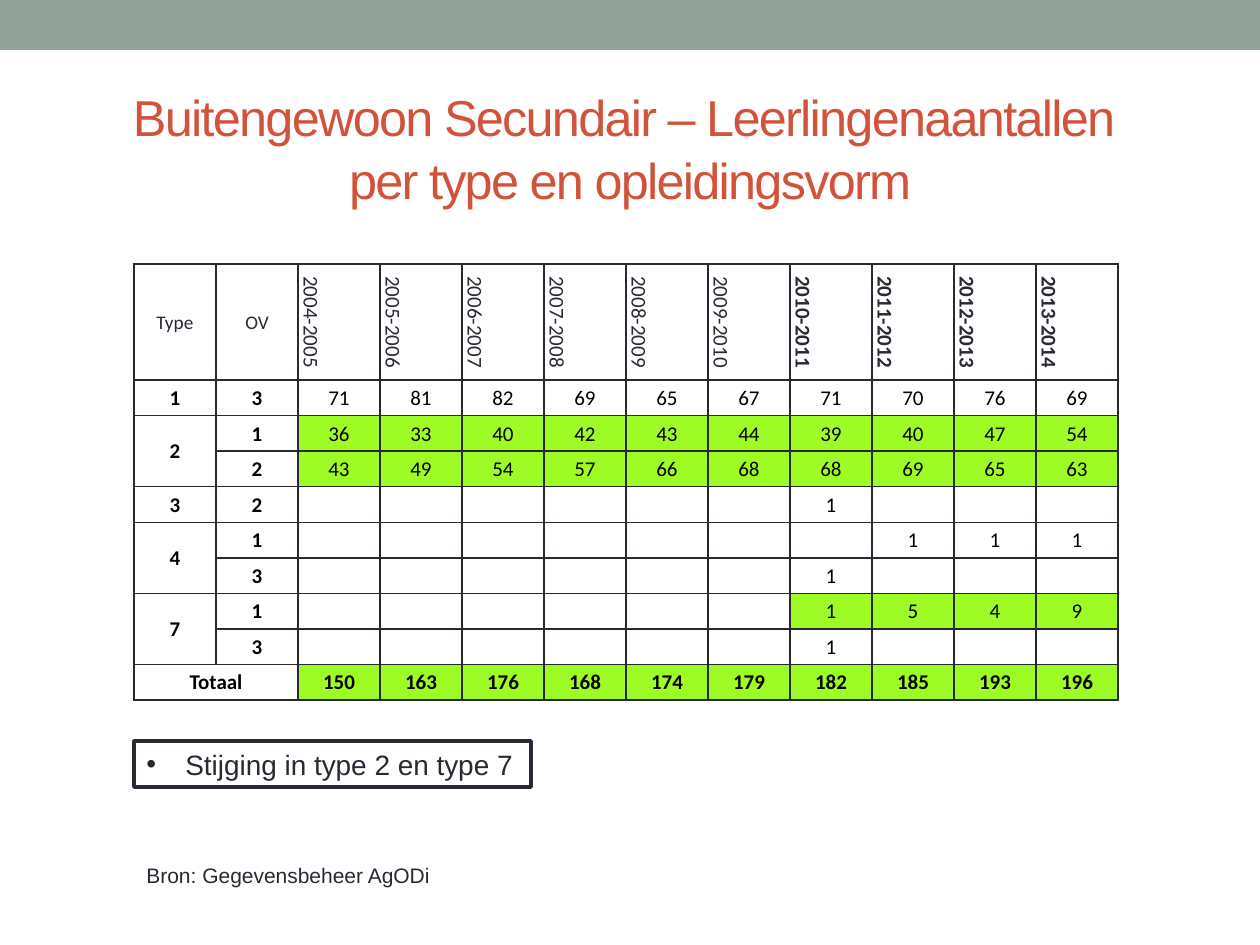
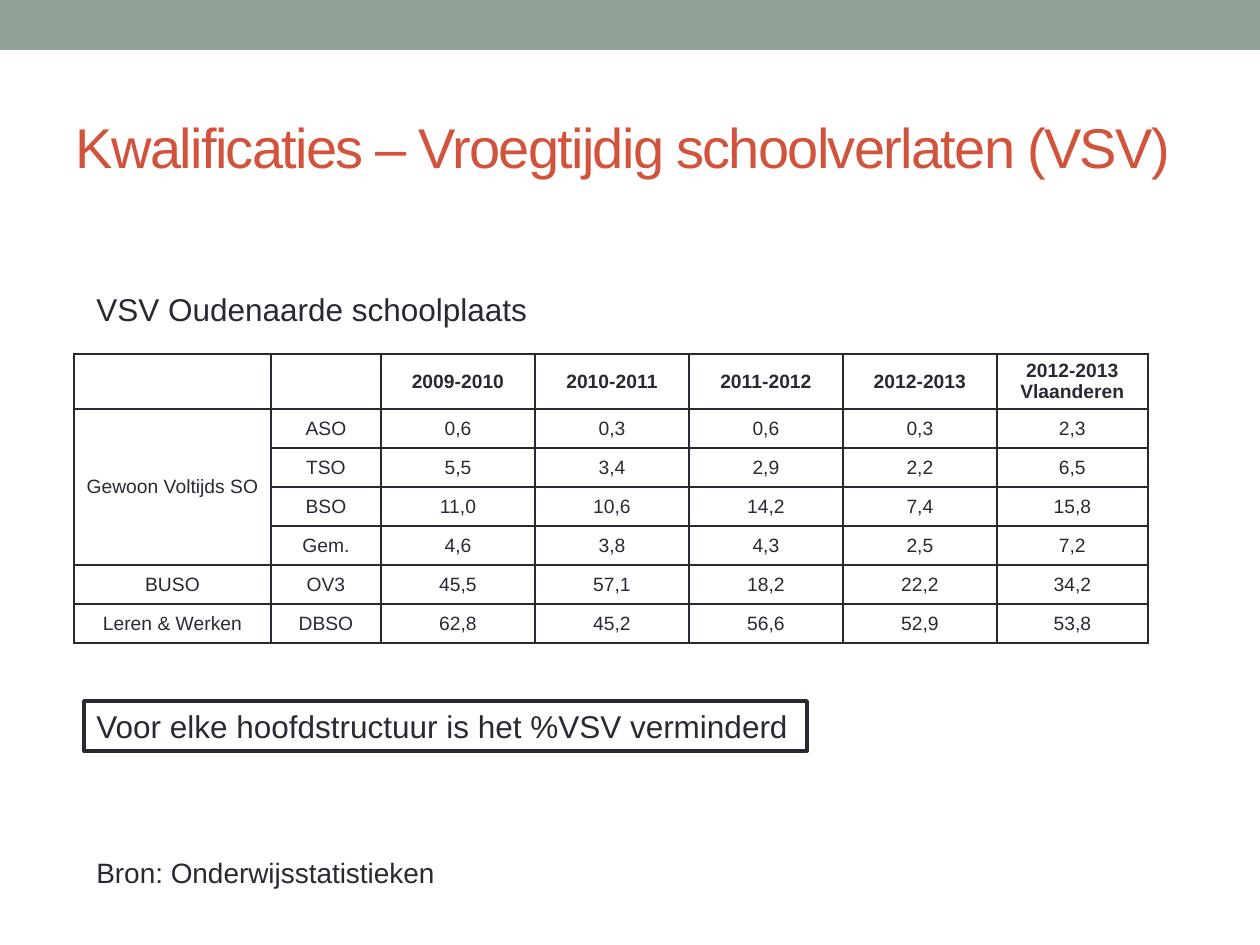
from dataclasses import dataclass

from lxml.etree import SubElement
from pptx import Presentation
from pptx.dml.color import RGBColor
from pptx.enum.shapes import MSO_SHAPE
from pptx.enum.text import MSO_ANCHOR, MSO_AUTO_SIZE, PP_ALIGN
from pptx.oxml import parse_xml
from pptx.oxml.ns import nsdecls, qn
from pptx.util import Emu, Pt

PX_PER_INCH = 126
TITLE_ONLY = 5


@dataclass(frozen=True)
class Theme:
    band: str = "93A299"
    accent: str = "D2533C"
    ink: str = "292934"
    black: str = "000000"
    paper: str = "FFFFFF"
    highlight: str = "9FFB25"
    font: str = "Arial"
    table_font: str = "Calibri"
    title: float = 32
    long_title: float = 28.8
    heading: float = 18
    body: float = 16
    small: float = 12
    cell: float = 11
    frame_width: float = 2.08
    border_width: float = 1


THEME = Theme()

# Pupil numbers by type and training form
PUPIL_YEARS = [f"{year}-{year + 1}" for year in range(2004, 2014)]
PUPIL_ROWS = [
    ["Type", "OV", *PUPIL_YEARS],
    ["1", "3", 71, 81, 82, 69, 65, 67, 71, 70, 76, 69],
    ["2", "1", 36, 33, 40, 42, 43, 44, 39, 40, 47, 54],
    ["", "2", 43, 49, 54, 57, 66, 68, 68, 69, 65, 63],
    ["3", "2", *[""] * 6, 1, "", "", ""],
    ["4", "1", *[""] * 7, 1, 1, 1],
    ["", "3", *[""] * 6, 1, "", "", ""],
    ["7", "1", *[""] * 6, 1, 5, 4, 9],
    ["", "3", *[""] * 6, 1, "", "", ""],
    ["Totaal", "", 150, 163, 176, 168, 174, 179, 182, 185, 193, 196],
]
PUPIL_MERGES = [(2, 0, 3, 0), (5, 0, 6, 0), (7, 0, 8, 0), (9, 0, 9, 1)]
FIRST_RECENT_COLUMN = 8

# Early school leaving, in percent
LEAVER_ROWS = [
    ["", "", "2009-2010", "2010-2011", "2011-2012", "2012-2013", "2012-2013\nVlaanderen"],
    ["Gewoon Voltijds SO", "ASO", "0,6", "0,3", "0,6", "0,3", "2,3"],
    ["", "TSO", "5,5", "3,4", "2,9", "2,2", "6,5"],
    ["", "BSO", "11,0", "10,6", "14,2", "7,4", "15,8"],
    ["", "Gem.", "4,6", "3,8", "4,3", "2,5", "7,2"],
    ["BUSO", "OV3", "45,5", "57,1", "18,2", "22,2", "34,2"],
    ["Leren & Werken", "DBSO", "62,8", "45,2", "56,6", "52,9", "53,8"],
]
LEAVER_MERGES = [(1, 0, 4, 0)]


def px(length):
    return Emu(round(length * 914400 / PX_PER_INCH))


def paint(fill, color):
    fill.solid()
    fill.fore_color.rgb = RGBColor.from_string(color)


def set_margins(target, left, top, right, bottom):
    target.margin_left, target.margin_top = px(left), px(top)
    target.margin_right, target.margin_bottom = px(right), px(bottom)


def write(frame, text, size=THEME.body, color=THEME.ink, font=THEME.font, bold=False,
          align=PP_ALIGN.LEFT, tracking=0, line_spacing=None, bullet_indent=0):
    """Fill a text frame; a newline starts a paragraph, a vertical tab breaks a line."""
    for index, line in enumerate(text.split("\n")):
        para = frame.add_paragraph() if index else frame.paragraphs[0]
        para.text = line
        para.alignment = align
        if line_spacing:
            para.line_spacing = line_spacing
        for span in para.runs:
            span.font.size = Pt(size)
            span.font.name = font
            span.font.bold = bold
            span.font.color.rgb = RGBColor.from_string(color)
            if tracking:
                span.font._element.set("spc", str(tracking * 100))
        if not line:
            # Keeps an empty row from growing to the default type size
            SubElement(para._p, qn("a:endParaRPr"), sz=str(round(size * 100)))
        if bullet_indent:
            properties = para._p.get_or_add_pPr()
            properties.set("marL", str(px(bullet_indent)))
            properties.set("indent", str(-px(bullet_indent)))
            SubElement(properties, qn("a:buFont"), typeface=THEME.font)
            SubElement(properties, qn("a:buChar"), char="•")


def add_master_band(deck, page):
    """Draw the top band and move it to the master, behind everything."""
    band = page.shapes.add_shape(MSO_SHAPE.RECTANGLE, 0, 0, deck.slide_width, px(50))
    band.shadow.inherit = False
    paint(band.fill, THEME.band)
    band.line.fill.background()
    deck.slide_master.shapes.element.insert(2, band.element)


def add_page(deck, title, **text_format):
    page = deck.slides.add_slide(deck.slide_layouts[TITLE_ONLY])
    box = page.shapes.title
    box.left, box.top, box.width, box.height = px(63), px(73), px(1134), px(136)
    frame = box.text_frame
    frame.auto_size = MSO_AUTO_SIZE.NONE
    frame.word_wrap = True
    frame.vertical_anchor = MSO_ANCHOR.MIDDLE
    set_margins(frame, 13, 12, 13, 1)
    write(frame, title, color=THEME.accent, tracking=-1, **text_format)
    return page


def add_text(page, text, left, top, width, height, framed=False, **text_format):
    area = px(left), px(top), px(width), px(height)
    if framed:
        box = page.shapes.add_shape(MSO_SHAPE.RECTANGLE, *area)
        box.shadow.inherit = False
        paint(box.fill, THEME.paper)
        paint(box.line.fill, THEME.ink)
        box.line.width = Pt(THEME.frame_width)
    else:
        box = page.shapes.add_textbox(*area)
    box.text_frame.word_wrap = True
    box.text_frame.vertical_anchor = MSO_ANCHOR.TOP
    write(box.text_frame, text, **text_format)


def add_borders(cell):
    properties = cell._tc.get_or_add_tcPr()
    for index, side in enumerate(("lnL", "lnR", "lnT", "lnB")):
        properties.insert(index, parse_xml(
            f'<a:{side} {nsdecls("a")} w="{Pt(THEME.border_width)}"><a:solidFill>'
            f'<a:srgbClr val="{THEME.ink}"/></a:solidFill></a:{side}>'))


def add_grid(page, rows, merges, left, top, column_widths, header_height, row_height,
             margins, style_cell):
    """Add a bordered table; style_cell(row, column) gives fill, vertical and text format."""
    height = header_height + row_height * (len(rows) - 1)
    table = page.shapes.add_table(len(rows), len(column_widths), px(left), px(top),
                                  px(sum(column_widths)), px(height)).table
    table.first_row = table.horz_banding = False
    for column, width in zip(table.columns, column_widths):
        column.width = px(width)
    for index, row in enumerate(table.rows):
        row.height = px(row_height if index else header_height)

    for row_index, values in enumerate(rows):
        for column_index, value in enumerate(values):
            cell = table.cell(row_index, column_index)
            fill, vertical, text_format = style_cell(row_index, column_index)
            cell.vertical_anchor = MSO_ANCHOR.MIDDLE
            set_margins(cell, *margins)
            paint(cell.fill, fill)
            add_borders(cell)
            if vertical:
                cell._tc.get_or_add_tcPr().set("vert", "vert")
            write(cell.text_frame, str(value), align=PP_ALIGN.CENTER, **text_format)

    for first_row, first_column, last_row, last_column in merges:
        table.cell(first_row, first_column).merge(table.cell(last_row, last_column))


def style_pupil_cell(row, column):
    header, label = row == 0, column < 2
    total = row == len(PUPIL_ROWS) - 1
    recent = column >= FIRST_RECENT_COLUMN
    rising = not label and (row in (2, 3) or total or (row == 7 and recent))
    text_format = {
        "font": THEME.table_font,
        "size": THEME.cell if header and label else THEME.small,
        "color": THEME.ink if header else THEME.black,
        "bold": recent if header else label or total,
    }
    return THEME.highlight if rising else THEME.paper, header and not label, text_format


def style_leaver_cell(row, column):
    return THEME.paper, False, {"size": THEME.cell, "bold": row == 0}


def build_pupils_page(deck):
    page = add_page(deck, "Buitengewoon Secundair – Leerlingenaantallen \vper type en opleidingsvorm",
                    size=THEME.long_title, align=PP_ALIGN.CENTER, line_spacing=1.05)
    add_grid(page, PUPIL_ROWS, PUPIL_MERGES, 134, 264, [82] * 12, 116, 35.6,
             (1, 1, 1, 0), style_pupil_cell)
    add_text(page, "Stijging in type 2 en type 7", 134, 741, 397, 46, framed=True, bullet_indent=39)
    add_text(page, "Bron: Gegevensbeheer AgODi", 134, 856, 311, 38, size=THEME.small)
    return page


def build_leavers_page(deck):
    page = add_page(deck, "Kwalificaties – Vroegtijdig schoolverlaten (VSV)", size=THEME.title)
    add_grid(page, LEAVER_ROWS, LEAVER_MERGES, 74, 354, [197, 110, *[154] * 4, 151], 55, 39,
             (12, 5, 12, 5), style_leaver_cell)
    add_text(page, "VSV Oudenaarde schoolplaats", 84, 284, 460, 50, size=THEME.heading)
    add_text(page, "Bron: Onderwijsstatistieken", 84, 849, 368, 47)
    add_text(page, "Voor elke hoofdstructuur is het %VSV verminderd", 84, 701, 723, 50,
             framed=True, size=THEME.heading)


def main():
    deck = Presentation()
    deck.slide_width, deck.slide_height = px(1260), px(945)
    pupils_page = build_pupils_page(deck)
    add_master_band(deck, pupils_page)
    build_leavers_page(deck)
    deck.save("out.pptx")


if __name__ == "__main__":
    main()
